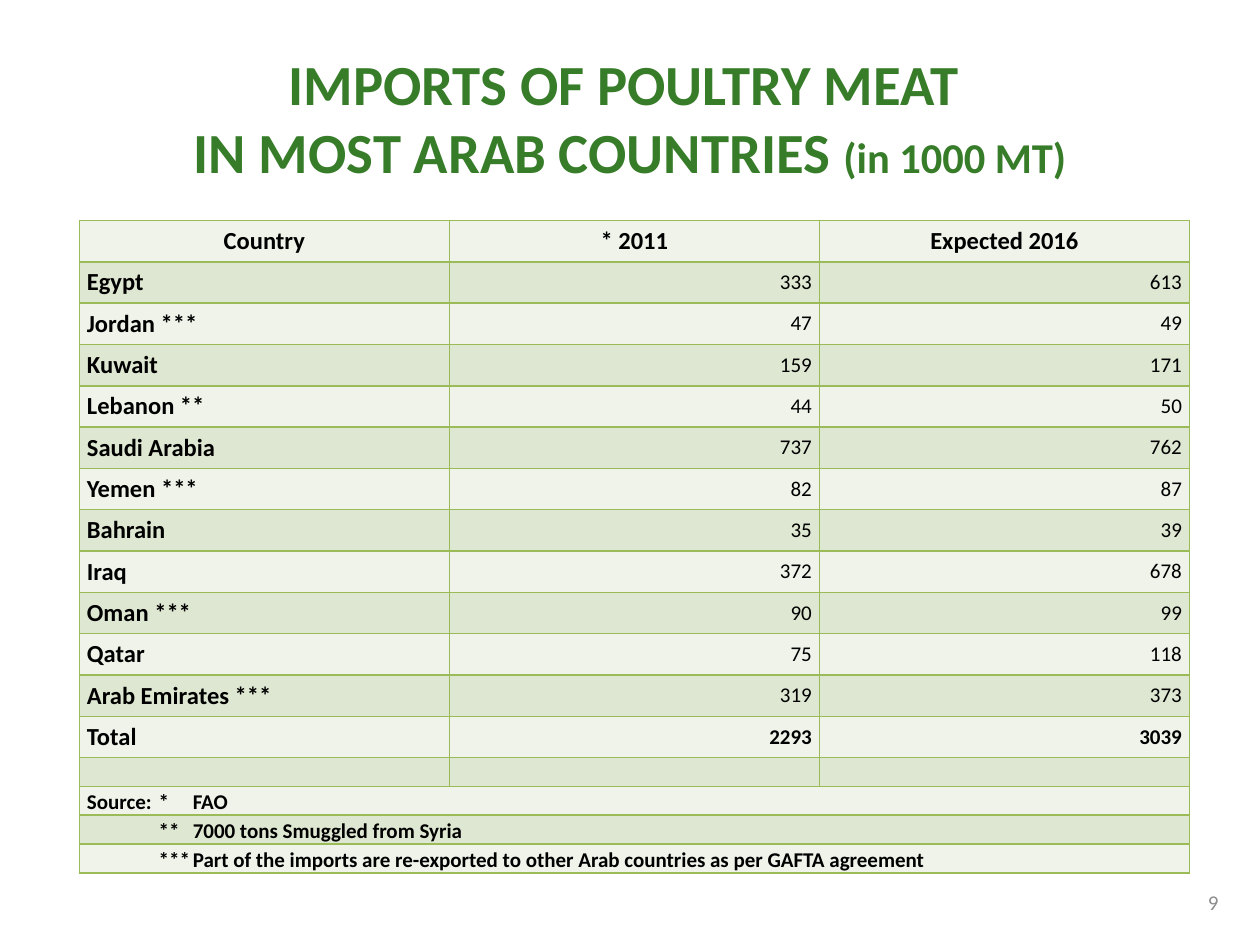
from lxml.etree import SubElement
from pptx import Presentation
from pptx.dml.color import RGBColor
from pptx.enum.text import MSO_ANCHOR, MSO_AUTO_SIZE, PP_ALIGN
from pptx.oxml import parse_xml
from pptx.oxml.ns import nsdecls, qn
from pptx.util import Inches, Pt

# Content
TITLE = ("IMPORTS OF POULTRY MEAT \vIN MOST ARAB COUNTRIES ", "(in 1000 MT)")
HEADER = ("Country", "* 2011", "Expected 2016")
IMPORTS = [
    ("Egypt", 333, 613),
    ("Jordan ***", 47, 49),
    ("Kuwait", 159, 171),
    ("Lebanon **", 44, 50),
    ("Saudi Arabia", 737, 762),
    ("Yemen ***", 82, 87),
    ("Bahrain", 35, 39),
    ("Iraq", 372, 678),
    ("Oman ***", 90, 99),
    ("Qatar", 75, 118),
    ("Arab Emirates ***", 319, 373),
]
TOTAL = ("Total", 2293, 3039)
FOOTNOTES = [
    "Source:\t*\tFAO",
    "\t**\t7000 tons Smuggled from Syria",
    "\t***\tPart of the imports are re-exported to other Arab countries as per GAFTA agreement",
]
PAGE_NUMBER = "9"

# Style and grid
FONT = "Calibri"
GREEN, BLACK, GREY, BORDER = "377C29", "000000", "8C8C8C", "9BBB59"
BANDS = ("EFF3EA", "DEE7D1")
LEFT, TOP, WIDTH, HEIGHT = 0.63, 1.75, 8.81, 5.18
TALL, SHORT = 0.33, 0.23
NOTE_TABS = (0.57, 0.84)


def color(hex_value):
    return RGBColor.from_string(hex_value)


def style(font, size, hex_value, bold=False):
    font.name, font.size, font.bold = FONT, Pt(size), bold
    font.color.rgb = color(hex_value)


def add_tabs(paragraph):
    tabs = SubElement(paragraph._p.get_or_add_pPr(), qn("a:tabLst"))
    for stop in NOTE_TABS:
        SubElement(tabs, qn("a:tab"), pos=str(Inches(stop)), algn="l")


def frame_cell(cell, band):
    cell.fill.solid()
    cell.fill.fore_color.rgb = color(band)
    cell.margin_left = cell.margin_right = Inches(0.06)
    cell.margin_top = cell.margin_bottom = 0
    for index, side in enumerate(("lnL", "lnR", "lnT", "lnB")):
        cell._tc.get_or_add_tcPr().insert(index, parse_xml(
            f'<a:{side} {nsdecls("a")} w="{Pt(1)}"><a:solidFill>'
            f'<a:srgbClr val="{BORDER}"/></a:solidFill></a:{side}>'))


def write_cell(cell, value, align, size, bold, anchor=MSO_ANCHOR.MIDDLE):
    cell.vertical_anchor = anchor
    cell.text = str(value)
    paragraph = cell.text_frame.paragraphs[0]
    paragraph.alignment = align
    if "\t" in str(value):
        add_tabs(paragraph)
    style(paragraph.font, size, BLACK, bold)
    if not value:
        SubElement(paragraph._p, qn("a:endParaRPr"), sz=str(size * 100))


def add_title(slide):
    title = slide.shapes.title
    title.left, title.top, title.width, title.height = map(Inches, (0.5, 0.3, 9, 1.25))
    frame = title.text_frame
    frame.auto_size = MSO_AUTO_SIZE.NONE
    frame.vertical_anchor = MSO_ANCHOR.MIDDLE
    heading, unit = TITLE
    paragraph = frame.paragraphs[0]
    paragraph.text = heading
    paragraph.alignment = PP_ALIGN.CENTER
    style(paragraph.font, 32.4, GREEN, True)
    unit_run = paragraph.add_run()
    unit_run.text = unit
    unit_run.font.size = Pt(24.3)


def add_imports_table(slide):
    data = [HEADER, *IMPORTS, TOTAL]
    spacer = len(data)
    weights = [TALL] * spacer + [SHORT] * (1 + len(FOOTNOTES))
    columns = len(HEADER)
    table = slide.shapes.add_table(len(weights), columns, Inches(LEFT), Inches(TOP),
                                   Inches(WIDTH), Inches(HEIGHT)).table
    for column in table.columns:
        column.width = Inches(WIDTH / columns)
    for r, weight in enumerate(weights):
        table.rows[r].height = Inches(HEIGHT * weight / sum(weights))
        for c in range(columns):
            frame_cell(table.cell(r, c), BANDS[r % 2])

    # Header, countries and total
    for r, row in enumerate(data):
        for c, value in enumerate(row):
            if r == 0:
                write_cell(table.cell(r, c), value, PP_ALIGN.CENTER, 14, True)
            elif c == 0:
                write_cell(table.cell(r, c), value, PP_ALIGN.LEFT, 14, True)
            else:
                write_cell(table.cell(r, c), value, PP_ALIGN.RIGHT, 12, row is TOTAL)

    # Empty row, then footnotes across the table
    for c in range(columns):
        write_cell(table.cell(spacer, c), "", PP_ALIGN.LEFT, 12, False)
    for r, note in enumerate(FOOTNOTES, spacer + 1):
        table.cell(r, 0).merge(table.cell(r, columns - 1))
        write_cell(table.cell(r, 0), note, PP_ALIGN.LEFT, 12, True, MSO_ANCHOR.BOTTOM)


def add_page_number(slide):
    box = slide.shapes.add_textbox(*map(Inches, (9.44, 6.96, 0.33, 0.4)))
    frame = box.text_frame
    frame.word_wrap = True
    frame.vertical_anchor = MSO_ANCHOR.MIDDLE
    paragraph = frame.paragraphs[0]
    paragraph.text = PAGE_NUMBER
    paragraph.alignment = PP_ALIGN.RIGHT
    style(paragraph.font, 12, GREY)


def main():
    deck = Presentation()
    deck.slide_width, deck.slide_height = Inches(10), Inches(7.5)
    slide = deck.slides.add_slide(deck.slide_layouts[5])
    add_title(slide)
    add_imports_table(slide)
    add_page_number(slide)
    deck.save("out.pptx")


if __name__ == "__main__":
    main()
